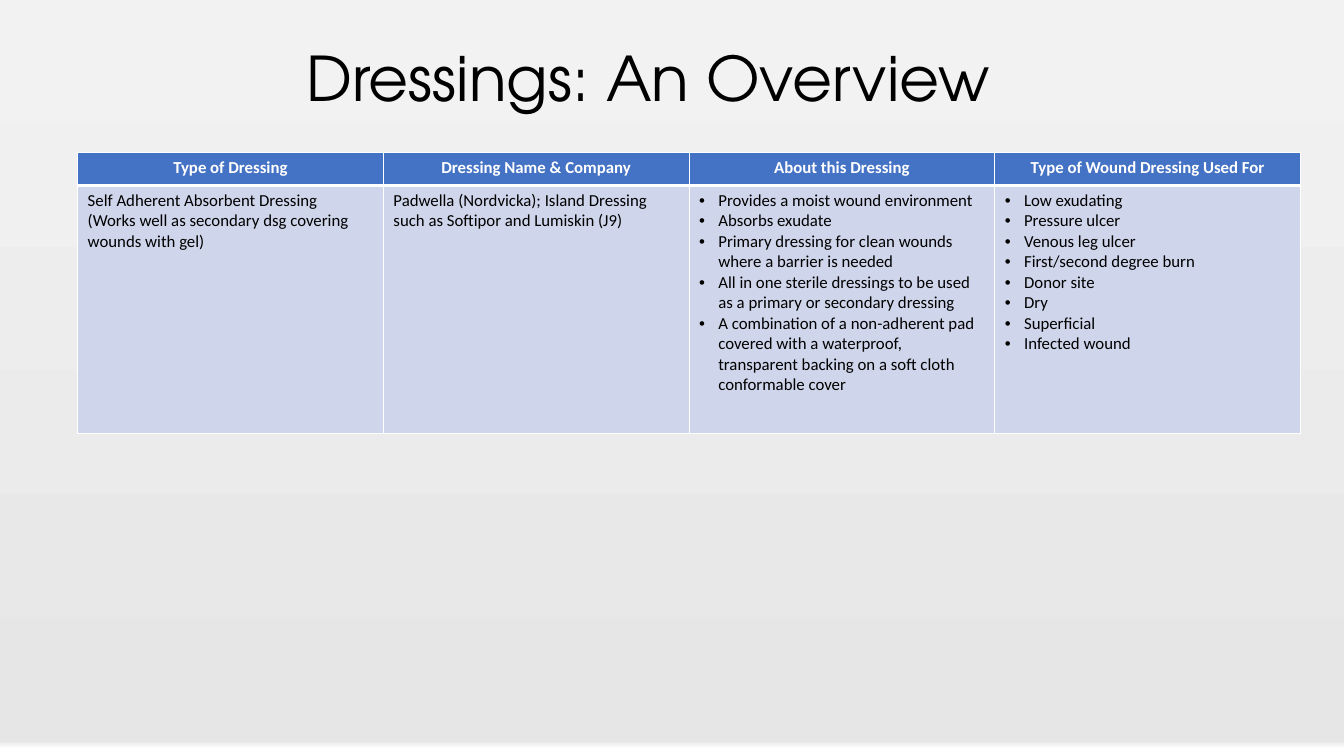
from copy import deepcopy

from pptx import Presentation
from pptx.dml.color import RGBColor
from pptx.enum.text import MSO_ANCHOR, PP_ALIGN
from pptx.oxml.ns import qn
from pptx.util import Inches, Pt
from lxml import etree

CENTER, LEFT = PP_ALIGN.CENTER, PP_ALIGN.LEFT
MIDDLE = MSO_ANCHOR.MIDDLE
BLACK = RGBColor(0x00, 0x00, 0x00)
WHITE = RGBColor(0xFF, 0xFF, 0xFF)
BLUE = RGBColor(0x44, 0x72, 0xC4)
PALE = RGBColor(0xCF, 0xD5, 0xEA)
STOPS = [(0.01, WHITE),
         (0.02, RGBColor(0xE7, 0xE6, 0xE6)),
         (1, RGBColor(0xF2, 0xF2, 0xF2))]

HEADS = ["Type of Dressing", "Dressing Name & Company",
         "About this Dressing", "Type of Wound Dressing Used For"]
BODY = [
    ["Self Adherent Absorbent Dressing",
     "(Works well as secondary dsg covering wounds with gel)"],
    ["Padwella (Nordvicka); Island Dressing such as Softipor and Lumiskin (J9)"],
    ["Provides a moist wound environment",
     "Absorbs exudate",
     "Primary dressing for clean wounds where a barrier is needed",
     "All in one sterile dressings to be used as a primary or secondary dressing",
     "A combination of a non-adherent pad covered with a waterproof, "
     "transparent backing on a soft cloth conformable cover"],
    ["Low exudating", "Pressure ulcer", "Venous leg ulcer",
     "First/second degree burn", "Donor site", "Dry", "Superficial",
     "Infected wound"],
]


def write(frame, lines, size=12, font="Calibri", color=BLACK, bold=False,
          align=LEFT, space=None, bullet=False):
    frame.word_wrap = True
    for i, line in enumerate(lines):
        para = frame.add_paragraph() if i else frame.paragraphs[0]
        para.alignment = align
        if space:
            para.line_spacing = space
        if bullet:
            props = para._p.get_or_add_pPr()
            props.set("marL", str(Inches(0.19)))
            props.set("indent", str(Inches(-0.19)))
            etree.SubElement(props, qn("a:buFont")).set("typeface", "Arial")
            etree.SubElement(props, qn("a:buChar")).set("char", "•")
        run = para.add_run()
        run.text = line
        run.font.size = Pt(size)
        run.font.name = font
        run.font.bold = bold
        run.font.color.rgb = color


def edge(cell, top, base):
    props = cell._tc.get_or_add_tcPr()
    widths = [("L", 1), ("R", 1), ("T", top), ("B", base)]
    for i, (side, width) in enumerate(widths):
        line = etree.Element(qn("a:ln" + side), w=str(Pt(width)))
        fill = etree.SubElement(line, qn("a:solidFill"))
        etree.SubElement(fill, qn("a:srgbClr")).set("val", str(WHITE))
        props.insert(i, line)


def paint(cell, color, top, base):
    cell.fill.solid()
    cell.fill.fore_color.rgb = color
    edge(cell, top, base)


def backdrop(slide):
    fill = slide.background.fill
    fill.gradient()
    fill.gradient_angle = 90
    stops = slide.element.find(".//" + qn("a:gsLst"))
    stops.append(deepcopy(stops[-1]))
    for stop, (place, color) in zip(fill.gradient_stops, STOPS):
        stop.position = place
        stop.color.rgb = color


def title(slide, x, y, w, h):
    frame = slide.shapes.add_textbox(
        Inches(x), Inches(y), Inches(w), Inches(h)).text_frame
    frame.vertical_anchor = MIDDLE
    write(frame, ["Dressings: An Overview"], size=44,
          font="TeX Gyre Adventor", align=CENTER, space=0.9)


def grid(slide, x, y, w, h, head=0.33):
    table = slide.shapes.add_table(
        2, len(HEADS), Inches(x), Inches(y), Inches(w), Inches(h)).table
    table.rows[0].height = Inches(head)
    table.rows[1].height = Inches(h - head)
    for col, (name, lines) in enumerate(zip(HEADS, BODY)):
        table.columns[col].width = Inches(w / len(HEADS))
        cell = table.cell(0, col)
        paint(cell, BLUE, 1, 3)
        write(cell.text_frame, [name], color=WHITE, bold=True, align=CENTER)
        cell = table.cell(1, col)
        paint(cell, PALE, 3, 1)
        write(cell.text_frame, lines, bullet=col > 1)


def main():
    deck = Presentation()
    deck.slide_width, deck.slide_height = Inches(13.33), Inches(7.5)
    slide = deck.slides.add_slide(deck.slide_layouts[6])
    backdrop(slide)
    title(slide, 0.68, 0.08, 11.5, 1.45)
    grid(slide, 0.77, 1.51, 12.13, 2.79)
    deck.save("out.pptx")


if __name__ == "__main__":
    main()
